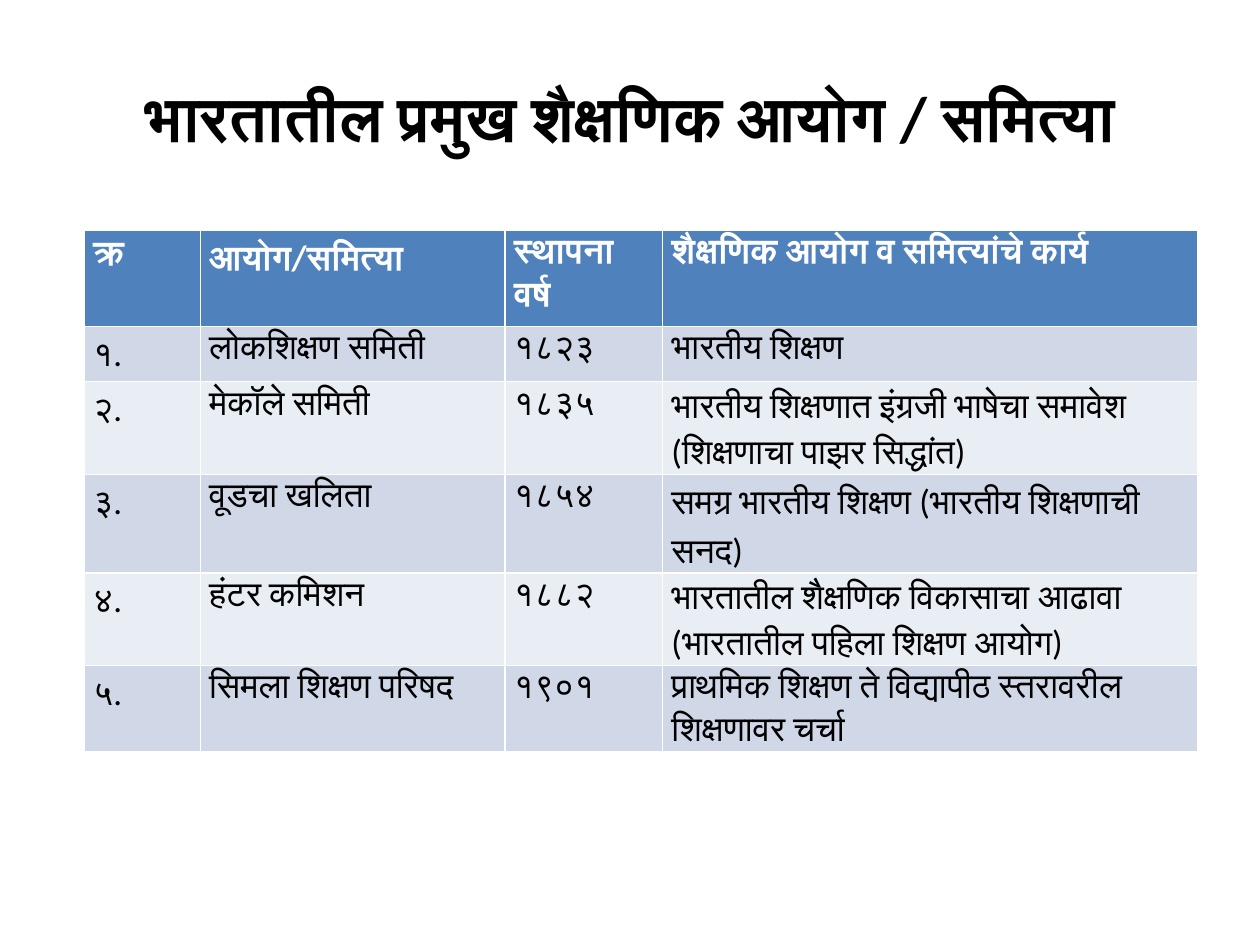
from typing import NamedTuple

from lxml import etree
from pptx import Presentation
from pptx.dml.color import RGBColor
from pptx.enum.text import MSO_ANCHOR, PP_ALIGN
from pptx.oxml.ns import qn
from pptx.util import Inches, Pt

CENTER, LEFT = PP_ALIGN.CENTER, PP_ALIGN.LEFT
MIDDLE = MSO_ANCHOR.MIDDLE

BLACK = RGBColor(0x00, 0x00, 0x00)
WHITE = RGBColor(0xFF, 0xFF, 0xFF)
HEADER_BLUE = RGBColor(0x4F, 0x81, 0xBD)
BANDS = (RGBColor(0xD0, 0xD8, 0xE8), RGBColor(0xE9, 0xED, 0xF4))

SINGLE, MEDIUM, LOOSE = 1.0, 1.08, 1.15
COLUMN_WIDTHS = (0.92, 2.42, 1.25, 4.25)
HEADER_HEIGHT = 0.76


class Commission(NamedTuple):
    number: str
    name: str
    year: str
    work: str
    height: float
    work_spacing: float = SINGLE


HEADINGS = ("क्र", "आयोग/समित्या", "स्थापना वर्ष", "शैक्षणिक आयोग व समित्यांचे कार्य")
COMMISSIONS = (
    Commission("१.", "लोकशिक्षण समिती", "१८२३", "भारतीय शिक्षण", 0.44),
    Commission("२.", "मेकॉले समिती", "१८३५",
               "भारतीय शिक्षणात इंग्रजी भाषेचा समावेश (शिक्षणाचा पाझर सिद्धांत)", 0.71, MEDIUM),
    Commission("३.", "वूडचा खलिता", "१८५४",
               "समग्र भारतीय शिक्षण (भारतीय शिक्षणाची सनद)", 0.78, LOOSE),
    Commission("४.", "हंटर कमिशन", "१८८२",
               "भारतातील शैक्षणिक विकासाचा आढावा (भारतातील पहिला शिक्षण आयोग)", 0.71, MEDIUM),
    Commission("५.", "सिमला शिक्षण परिषद", "१९०१",
               "प्राथमिक शिक्षण ते विद्यापीठ स्तरावरील शिक्षणावर चर्चा", 0.63),
)


def write_text(frame, text: str, *, size: float = 20, font: str = "Calibri",
               color: RGBColor = BLACK, bold: bool = False,
               align=LEFT, spacing: float = SINGLE) -> None:
    paragraph = frame.paragraphs[0]
    paragraph.alignment = align
    paragraph.line_spacing = spacing
    run = paragraph.add_run()
    run.text = text
    run.font.size = Pt(size)
    run.font.name = font
    run.font.bold = bold
    run.font.color.rgb = color
    # Devanagari takes its font from the complex-script setting
    etree.SubElement(run.font._element, qn("a:cs")).set("typeface", font)


def fill_cell(cell, text: str, fill: RGBColor, **text_format) -> None:
    cell.fill.solid()
    cell.fill.fore_color.rgb = fill
    cell.margin_left = cell.margin_right = Inches(0.07)
    cell.margin_top = cell.margin_bottom = 0
    write_text(cell.text_frame, text, **text_format)


def add_commission_table(slide) -> None:
    heights = (HEADER_HEIGHT, *(commission.height for commission in COMMISSIONS))
    table = slide.shapes.add_table(
        len(heights), len(COLUMN_WIDTHS), Inches(0.67), Inches(1.83),
        Inches(sum(COLUMN_WIDTHS)), Inches(sum(heights))).table
    for column, width in zip(table.columns, COLUMN_WIDTHS):
        column.width = Inches(width)
    for row, height in zip(table.rows, heights):
        row.height = Inches(height)

    # Header row
    for index, heading in enumerate(HEADINGS):
        fill_cell(table.cell(0, index), heading, HEADER_BLUE, color=WHITE, bold=True,
                  font="Calibri" if index else "Lato",
                  spacing=LOOSE if index == 1 else SINGLE)

    # One banded row for each commission
    for index, commission in enumerate(COMMISSIONS):
        spacings = (LOOSE, SINGLE, SINGLE, commission.work_spacing)
        for column, spacing in enumerate(spacings):
            fill_cell(table.cell(index + 1, column), commission[column],
                      BANDS[index % 2], spacing=spacing)


def main() -> None:
    deck = Presentation()
    deck.slide_width, deck.slide_height = Inches(10), Inches(7.5)
    slide = deck.slides.add_slide(deck.slide_layouts[5])

    # Title
    title = slide.shapes.title
    title.left, title.top = Inches(0.5), Inches(0.3)
    title.width, title.height = Inches(9), Inches(1.25)
    title.text_frame.vertical_anchor = MIDDLE
    write_text(title.text_frame, "भारतातील प्रमुख शैक्षणिक आयोग / समित्या",
               size=36, bold=True, align=CENTER)

    add_commission_table(slide)
    deck.save("out.pptx")


if __name__ == "__main__":
    main()
